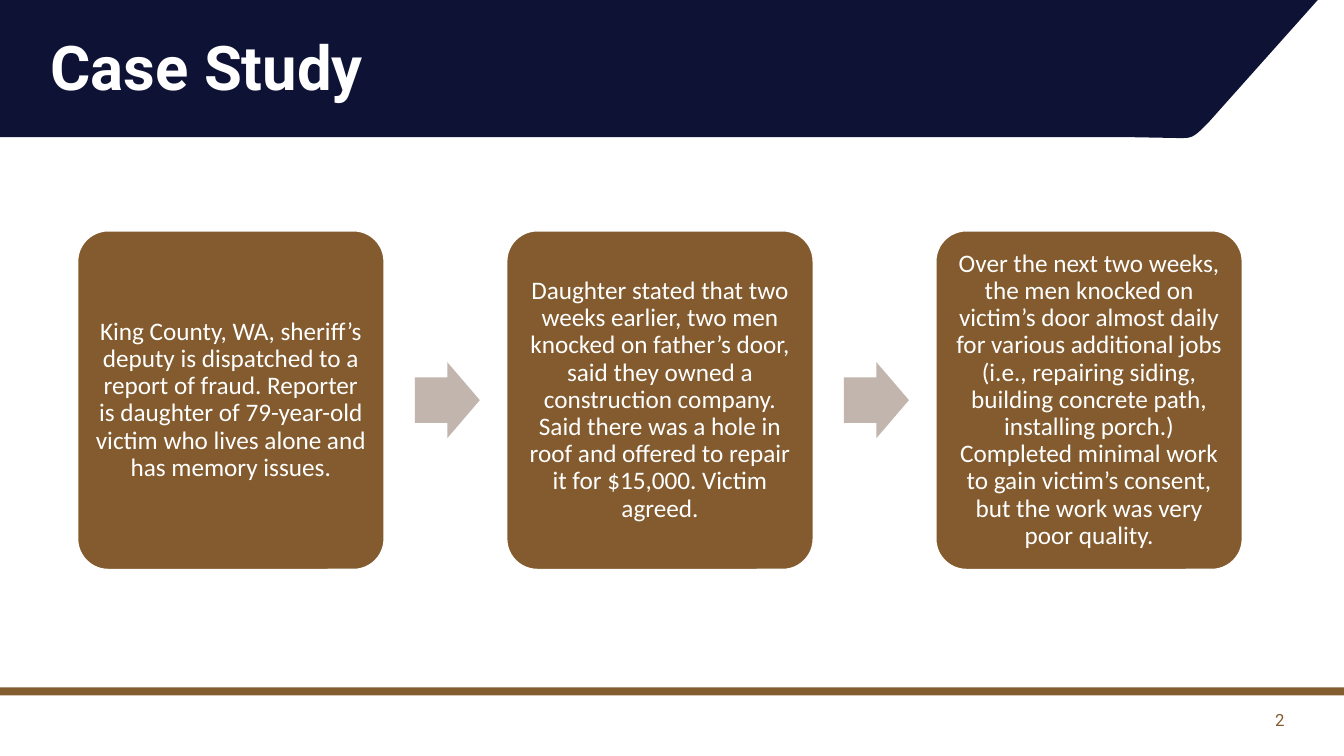
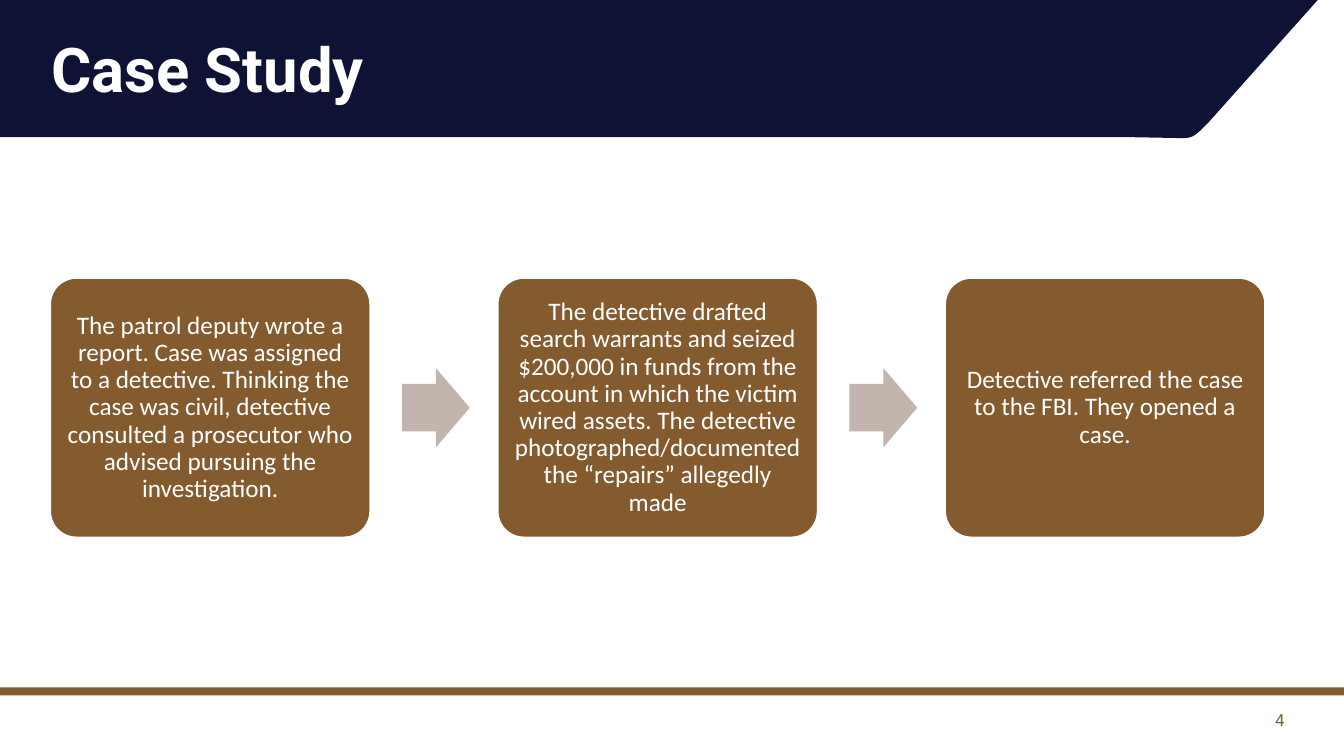
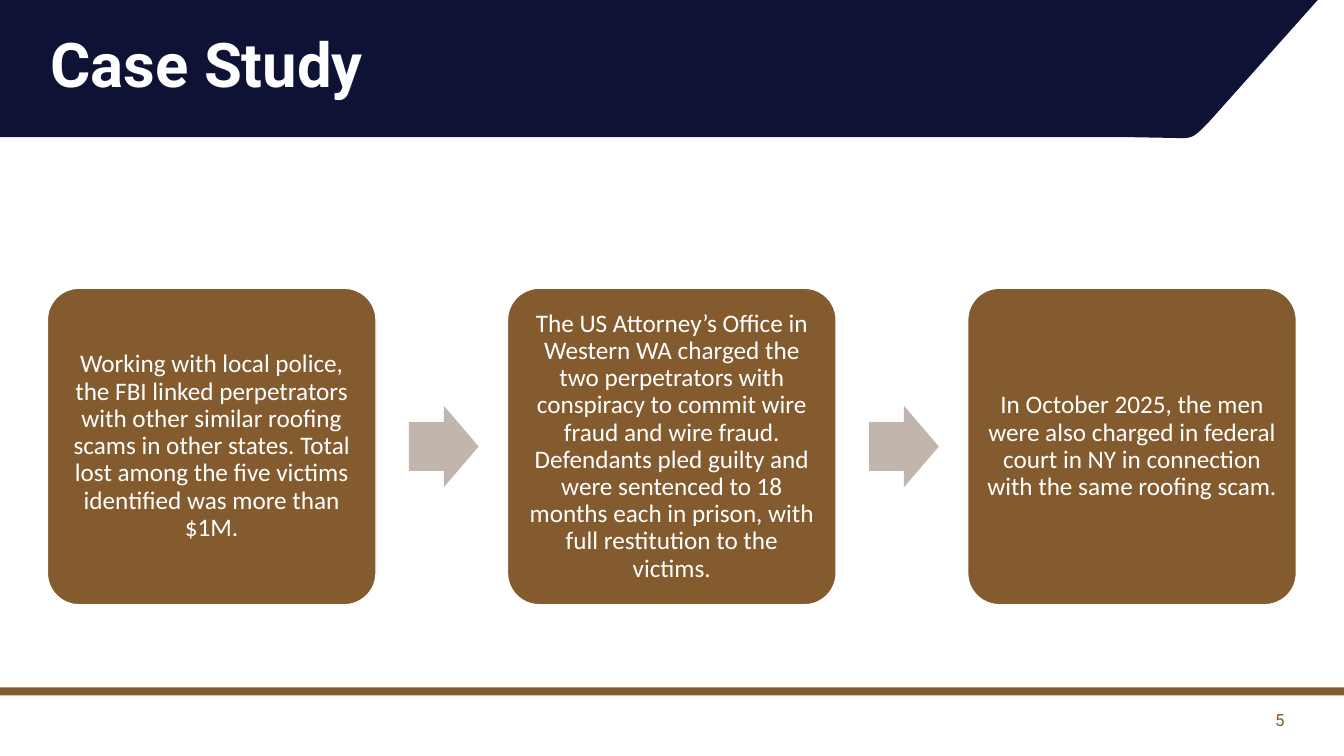
from pptx import Presentation
from pptx.dml.color import RGBColor
from pptx.enum.shapes import MSO_SHAPE
from pptx.enum.text import MSO_ANCHOR, PP_ALIGN
from pptx.util import Inches, Pt

NAVY = RGBColor(0x0E, 0x13, 0x36)
RULE_BROWN = RGBColor(0x83, 0x5C, 0x2F)
CARD_BROWN = RGBColor(0x83, 0x5B, 0x2E)
ARROW_TAUPE = RGBColor(0xC1, 0xB5, 0xAD)
WHITE = RGBColor(0xFF, 0xFF, 0xFF)

HEADING_FONT = "Roboto"
BODY_FONT = "Calibri"
SLIDE_WIDTH, SLIDE_HEIGHT = 13.33, 7.5

# Rounded lower corner of the title band, as Bezier control points
BAND_CORNER = [(12, 1.2), (11.83, 1.38), (11.82, 1.37), (11.68, 1.37)]
CORNER_STEPS = 10

# Proportions of the process, relative to the width of one card
CARD_PITCH = 1.4
ARROW_OFFSET = 1.1
ARROW_WIDTH = 0.212
ARROW_HEIGHT = 0.248

# number, title position, row of cards (left, top, card width, height), texts
CASE_SLIDES = [
    (2, (0.45, 0.32), (0.77, 2.29, 3.04, 3.36), [
        "King County, WA, sheriff’s deputy is dispatched to a report of fraud. "
        "Reporter is daughter of 79-year-old victim who lives alone and has "
        "memory issues.",
        "Daughter stated that two weeks earlier, two men knocked on father’s "
        "door, said they owned a construction company. Said there was a hole in "
        "roof and offered to repair it for $15,000. Victim agreed.",
        "Over the next two weeks, the men knocked on victim’s door almost daily "
        "for various additional jobs (i.e., repairing siding, building concrete "
        "path, installing porch.) Completed minimal work to gain victim’s "
        "consent, but the work was very poor quality.",
    ]),
    (4, (0.46, 0.34), (0.5, 2.76, 3.17, 2.57), [
        "The patrol deputy wrote a report. Case was assigned to a detective. "
        "Thinking the case was civil, detective consulted a prosecutor who "
        "advised pursuing the investigation.",
        "The detective drafted search warrants and seized $200,000 in funds from "
        "the account in which the victim wired assets. The detective "
        "photographed/documented the “repairs” allegedly made",
        "Detective referred the case to the FBI. They opened a case.",
    ]),
    (5, (0.45, 0.29), (0.47, 2.86, 3.26, 3.14), [
        "Working with local police, the FBI linked perpetrators with other "
        "similar roofing scams in other states. Total lost among the five "
        "victims identified was more than $1M.",
        "The US Attorney’s Office in Western WA charged the two perpetrators "
        "with conspiracy to commit wire fraud and wire fraud. Defendants pled "
        "guilty and were sentenced to 18 months each in prison, with full "
        "restitution to the victims.",
        "In October 2025, the men were also charged in federal court in NY in "
        "connection with the same roofing scam.",
    ]),
]


def style_shape(shape, fill, line=None):
    shape.shadow.inherit = False
    shape.fill.solid()
    shape.fill.fore_color.rgb = fill
    if line is None:
        shape.line.fill.background()
    else:
        shape.line.color.rgb = line
        shape.line.width = Pt(1)


def add_preset(slide, preset, left, top, width, height, fill, line=None):
    shape = slide.shapes.add_shape(
        preset, Inches(left), Inches(top), Inches(width), Inches(height))
    style_shape(shape, fill, line)
    return shape


def write_text(shape, text, font_name, size, color, inset, bold=False,
               align=PP_ALIGN.LEFT, anchor=MSO_ANCHOR.TOP, line_spacing=0.9):
    frame = shape.text_frame
    frame.word_wrap = True
    frame.vertical_anchor = anchor
    frame.margin_left = frame.margin_right = Inches(inset)
    frame.margin_top = frame.margin_bottom = Inches(inset)
    paragraph = frame.paragraphs[0]
    paragraph.alignment = align
    paragraph.line_spacing = line_spacing
    run = paragraph.add_run()
    run.text = text
    run.font.name = font_name
    run.font.size = Pt(size)
    run.font.bold = bold
    run.font.color.rgb = color


def bezier_point(controls, t):
    weights = ((1 - t) ** 3, 3 * t * (1 - t) ** 2, 3 * t * t * (1 - t), t ** 3)
    return tuple(sum(weight * point[axis]
                     for weight, point in zip(weights, controls))
                 for axis in (0, 1))


def add_title_band(slide, left, top, title_position):
    corner = [bezier_point(BAND_CORNER, step / CORNER_STEPS)
              for step in range(CORNER_STEPS + 1)]
    outline = [(0, 0), (13.07, 0), *corner, (11.14, 1.36), (0, 1.36)]
    points = [(Inches(left + x), Inches(top + y)) for x, y in outline]
    builder = slide.shapes.build_freeform(*points[0])
    builder.add_line_segments(points[1:], close=True)
    style_shape(builder.convert_to_shape(), NAVY)

    title_left, title_top = title_position
    title = slide.shapes.add_textbox(
        Inches(left + title_left), Inches(top + title_top),
        Inches(12.39), Inches(1.12))
    write_text(title, "Case Study", HEADING_FONT, 44, WHITE, 0.05, bold=True)


def add_footer(slide, left, top, width, number):
    add_preset(slide, MSO_SHAPE.RECTANGLE, left, top, width, 0.08, RULE_BROWN)
    number_box = slide.shapes.add_textbox(
        Inches(left + width - 0.79), Inches(top + 0.18), Inches(0.3), Inches(0.29))
    write_text(number_box, str(number), HEADING_FONT, 12, RULE_BROWN, 0.1,
               align=PP_ALIGN.RIGHT, anchor=MSO_ANCHOR.MIDDLE, line_spacing=1.0)
    number_box.text_frame.margin_left = 0


def add_process(slide, left, top, card_width, height, texts):
    arrow_height = ARROW_HEIGHT * card_width
    for index, text in enumerate(texts):
        card_left = left + index * CARD_PITCH * card_width
        card = add_preset(slide, MSO_SHAPE.ROUNDED_RECTANGLE, card_left, top,
                          card_width, height, CARD_BROWN, WHITE)
        card.adjustments[0] = 0.1
        write_text(card, text, BODY_FONT, 18, WHITE, 0.07,
                   align=PP_ALIGN.CENTER, anchor=MSO_ANCHOR.MIDDLE)
        # An arrow leads to every card but the first
        if index < len(texts) - 1:
            arrow = add_preset(
                slide, MSO_SHAPE.RIGHT_ARROW,
                card_left + ARROW_OFFSET * card_width,
                top + (height - arrow_height) / 2,
                ARROW_WIDTH * card_width, arrow_height, ARROW_TAUPE)
            arrow.adjustments[0] = 0.6
            arrow.adjustments[1] = 0.5


def add_case_slide(presentation, number, title_position, row, texts):
    slide = presentation.slides.add_slide(presentation.slide_layouts[6])
    add_title_band(slide, 0, 0, title_position)
    add_footer(slide, 0, 6.82, SLIDE_WIDTH, number)
    add_process(slide, *row, texts)


def main():
    presentation = Presentation()
    presentation.slide_width = Inches(SLIDE_WIDTH)
    presentation.slide_height = Inches(SLIDE_HEIGHT)
    for case_slide in CASE_SLIDES:
        add_case_slide(presentation, *case_slide)
    presentation.save("out.pptx")


if __name__ == "__main__":
    main()
